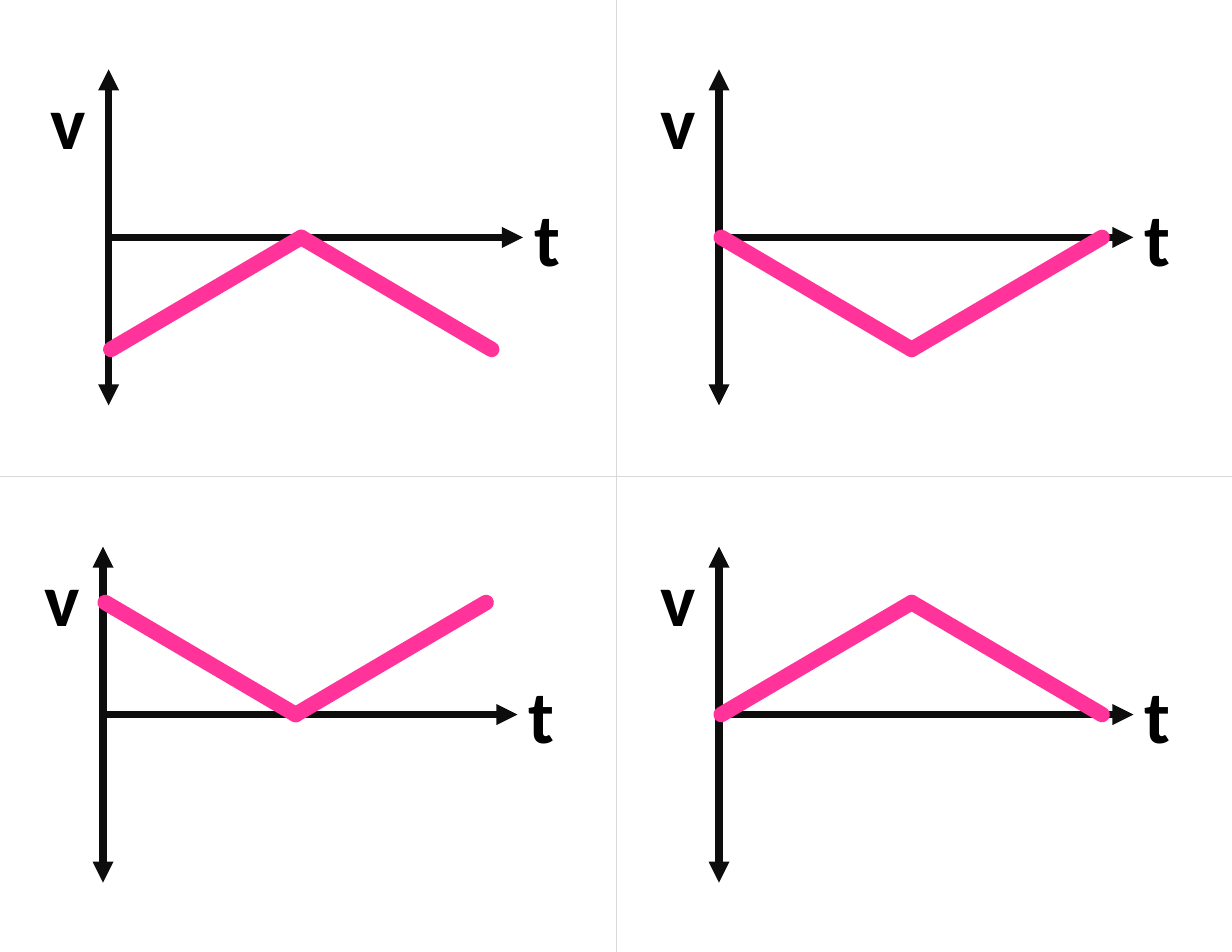
from dataclasses import dataclass
from itertools import pairwise

from lxml import etree
from pptx import Presentation
from pptx.dml.color import RGBColor
from pptx.enum.shapes import MSO_CONNECTOR
from pptx.enum.text import MSO_AUTO_SIZE
from pptx.oxml.ns import qn
from pptx.util import Inches, Pt

STRAIGHT = MSO_CONNECTOR.STRAIGHT
FIT = MSO_AUTO_SIZE.SHAPE_TO_FIT_TEXT


@dataclass(frozen=True)
class Theme:
    font: str = "Calibri"
    size: float = 48
    text: str = "000000"
    rule: str = "D9D9D9"
    axis: str = "0D0D0D"
    curve: str = "FF3399"
    thin: float = 0.5
    mid: float = 4.5
    thick: float = 10


THEME = Theme()
WIDE, HIGH = 11, 8.5
REACH = 3.7   # length of the time axis
HALF = 1.5    # speed axis above and below the origin
STEP = 1.7    # time between the points of a curve
INSET = 0.02  # curve start, right of the speed axis

# Origin of each graph, then speed at the start, middle and end
GRAPHS = [
    (0.97, 2.12, (-1, 0, -1)),
    (6.42, 2.12, (0, -1, 0)),
    (0.92, 6.38, (1, 0, 1)),
    (6.42, 6.38, (0, 1, 0)),
]


def add_line(slide, start, end, color, width, ends=(), cap="flat"):
    """Draw a line; ends names the arrowheads: headEnd at start, tailEnd at end."""
    points = [Inches(v) for v in (*start, *end)]
    line = slide.shapes.add_connector(STRAIGHT, *points)
    line.line.color.rgb = RGBColor.from_string(color)
    line.line.width = Pt(width)
    props = line.line._get_or_add_ln()
    props.set("cap", cap)
    for tag in ends:
        etree.SubElement(props, qn(f"a:{tag}"), type="triangle")
    etree.SubElement(line._element.spPr, qn("a:effectLst"))


def add_label(slide, text, left, top, width):
    box = slide.shapes.add_textbox(
        Inches(left), Inches(top), Inches(width), Inches(0.91))
    frame = box.text_frame
    frame.text = text
    frame.word_wrap = False
    frame.auto_size = FIT
    font = frame.paragraphs[0].runs[0].font
    font.name = THEME.font
    font.size = Pt(THEME.size)
    font.bold = True
    font.color.rgb = RGBColor.from_string(THEME.text)


def add_axes(slide, x, y):
    add_line(slide, (x, y - HALF), (x, y + HALF), THEME.axis, THEME.mid,
             ("headEnd", "tailEnd"))
    add_line(slide, (x, y), (x + REACH, y), THEME.axis, THEME.mid,
             ("tailEnd",))
    add_label(slide, "v", x - 0.62, y - HALF, 0.57)
    add_label(slide, "t", x + REACH, y - 0.46, 0.46)


def add_curve(slide, x, y, speeds):
    points = [(x + INSET + i * STEP, y - v) for i, v in enumerate(speeds)]
    for start, end in pairwise(points):
        add_line(slide, start, end, THEME.curve, THEME.thick, cap="rnd")


def main():
    deck = Presentation()
    deck.slide_width, deck.slide_height = Inches(WIDE), Inches(HIGH)
    slide = deck.slides.add_slide(deck.slide_layouts[6])
    add_line(slide, (0, HIGH / 2), (WIDE, HIGH / 2), THEME.rule, THEME.thin)
    add_line(slide, (WIDE / 2, 0), (WIDE / 2, HIGH), THEME.rule, THEME.thin)
    for x, y, _ in GRAPHS:
        add_axes(slide, x, y)
    for x, y, speeds in GRAPHS:
        add_curve(slide, x, y, speeds)
    deck.save("out.pptx")


if __name__ == "__main__":
    main()
